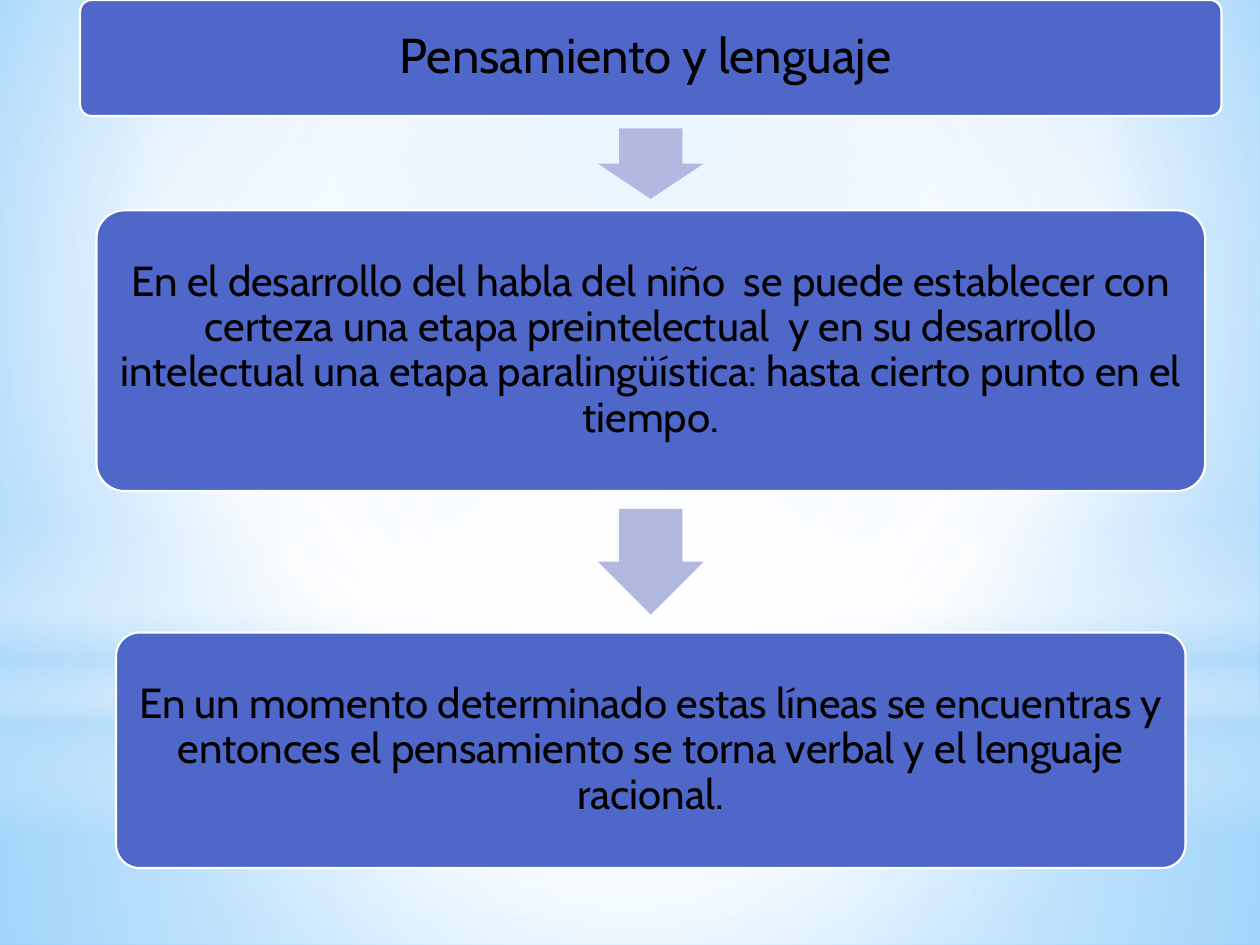
from lxml.etree import SubElement
from pptx import Presentation
from pptx.dml.color import RGBColor
from pptx.enum.shapes import MSO_SHAPE
from pptx.enum.text import MSO_ANCHOR, PP_ALIGN
from pptx.oxml.ns import qn
from pptx.util import Cm, Pt


def color(hex_string):
    return RGBColor.from_string(hex_string)


def set_gradient(parent, stops, center=None, angle=None):
    """Stops are (position %, colour, opacity %); center is left, top, right, bottom %."""
    gradient = next(parent.iter(qn("a:gradFill")))
    for child in list(gradient):
        gradient.remove(child)
    stop_list = SubElement(gradient, qn("a:gsLst"))
    for position, hex_string, opacity in stops:
        stop = SubElement(stop_list, qn("a:gs"), pos=str(position * 1000))
        stop_color = SubElement(stop, qn("a:srgbClr"), val=hex_string)
        if opacity < 100:
            SubElement(stop_color, qn("a:alpha"), val=str(opacity * 1000))
    if center:
        circle = SubElement(gradient, qn("a:path"), path="circle")
        sides = {side: str(value * 1000) for side, value in zip("ltrb", center)}
        SubElement(circle, qn("a:fillToRect"), **sides)
    else:
        SubElement(gradient, qn("a:lin"), ang=str(angle * 60000), scaled="0")


class FlowSlide:
    font = "Cabin"
    text_color = "000000"
    box_color = "4E67C8"
    arrow_color = "B2B8E0"
    border_color = "FFFFFF"
    axis = 13.12  # horizontal centre of the flow, in cm

    def __init__(self, slide):
        self.slide = slide

    def background(self, stops, center):
        self.slide.background.fill.gradient()
        set_gradient(self.slide.element, stops, center)

    def shape(self, kind, left, top, width, height):
        shape = self.slide.shapes.add_shape(
            kind, Cm(left), Cm(top), Cm(width), Cm(height))
        shape.shadow.inherit = False
        shape.line.fill.background()
        return shape

    def glow(self, kind, top, height, stops, center=(50, 50, 50, 50), angle=None):
        shape = self.shape(kind, 0, top, 25.4, height)
        shape.fill.gradient()
        set_gradient(shape.element, stops, center, angle)

    def box(self, top, width, height, text=None):
        shape = self.shape(MSO_SHAPE.ROUNDED_RECTANGLE,
                           self.axis - width / 2, top, width, height)
        shape.adjustments[0] = 0.1
        shape.fill.solid()
        shape.fill.fore_color.rgb = color(self.box_color)
        shape.line.color.rgb = color(self.border_color)
        shape.line.width = Pt(1.25)
        if text:
            self.set_text(shape, text, 24, 0.25)

    def arrow(self, top, height, width=2.13):
        shape = self.shape(MSO_SHAPE.DOWN_ARROW,
                           self.axis - width / 2, top, width, height)
        shape.adjustments[0] = 0.6
        shape.adjustments[1] = 0.5
        shape.fill.solid()
        shape.fill.fore_color.rgb = color(self.arrow_color)

    def title(self, text, top, width, height):
        title = self.slide.shapes.title
        title.left, title.top = Cm(self.axis - width / 2), Cm(top)
        title.width, title.height = Cm(width), Cm(height)
        self.set_text(title, text, 28, 0.3)
        # Bring the title in front of its box
        self.slide.shapes.element.append(title.element)

    def set_text(self, shape, text, size, margin):
        frame = shape.text_frame
        frame.word_wrap = True
        frame.vertical_anchor = MSO_ANCHOR.MIDDLE
        frame.margin_left = frame.margin_right = Cm(margin)
        frame.margin_top = frame.margin_bottom = Cm(margin)
        paragraph = frame.paragraphs[0]
        paragraph.text = text
        paragraph.alignment = PP_ALIGN.CENTER
        paragraph.line_spacing = 0.9
        paragraph.font.name = self.font
        paragraph.font.size = Pt(size)
        paragraph.font.color.rgb = color(self.text_color)


def main():
    presentation = Presentation()
    presentation.slide_width, presentation.slide_height = Cm(25.4), Cm(19.05)
    flow = FlowSlide(presentation.slides.add_slide(presentation.slide_layouts[5]))

    # Sky background with soft glows
    white, pale = "FFFFFF", "B4DCFA"
    flow.background([(0, "9ED5FF", 100), (60, white, 100), (100, "5BB9FF", 100)],
                    (20, 10, 20, 60))
    flow.glow(MSO_SHAPE.RECTANGLE, 14.17, 4.88,
              [(0, white, 91), (37, white, 76), (100, pale, 79)])
    flow.glow(MSO_SHAPE.RECTANGLE, 0, 14.17,
              [(0, white, 89), (48, white, 62), (100, pale, 79)])
    flow.glow(MSO_SHAPE.RECTANGLE, 10.46, 6.35,
              [(0, white, 0), (29, white, 30), (45, pale, 40),
               (55, white, 26), (65, pale, 60), (100, white, 0)],
              center=None, angle=90)
    flow.glow(MSO_SHAPE.OVAL, 4.45, 14.17, [(0, white, 100), (56, white, 0)])

    # Title box
    flow.box(0, 23.01, 2.34)
    flow.title("Pensamiento y lenguaje ", 0.08, 22.86, 2.18)

    # Steps
    flow.arrow(2.59, 1.42)
    flow.box(4.24, 22.35, 5.66,
             "En el desarrollo del habla del niño  se puede establecer con certeza "
             "una etapa preintelectual  y en su desarrollo intelectual una etapa "
             "paralingüística: hasta cierto punto en el tiempo.")
    flow.arrow(10.26, 2.13)
    flow.box(12.75, 21.56, 4.75,
             "En un momento determinado estas líneas se encuentras y entonces el "
             "pensamiento se torna verbal y el lenguaje racional.")

    presentation.save("out.pptx")


if __name__ == "__main__":
    main()
